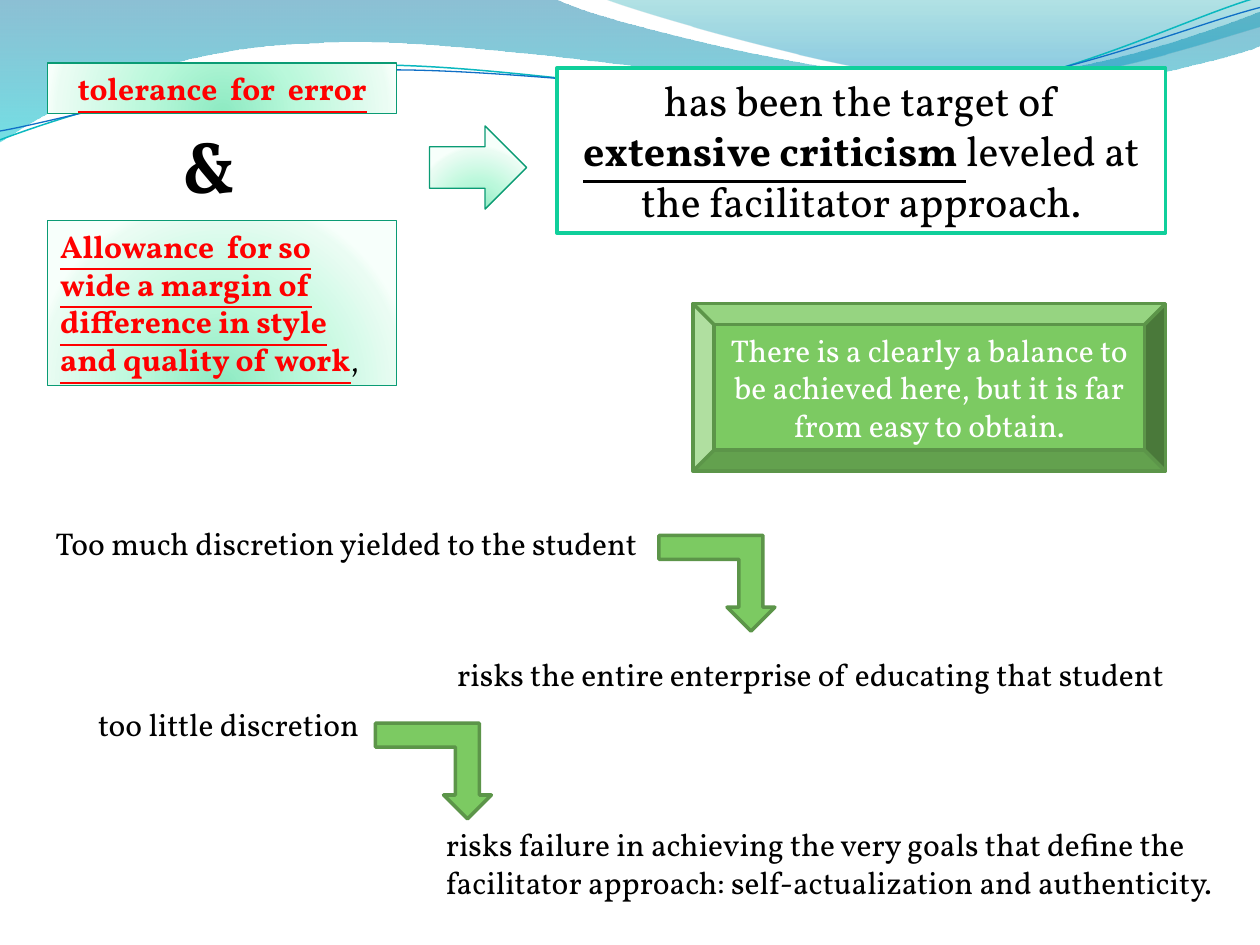
import math
from dataclasses import dataclass
from typing import Optional

from lxml import etree
from pptx import Presentation
from pptx.dml.color import RGBColor
from pptx.enum import shapes, text
from pptx.oxml import ns
from pptx.util import Inches, Pt

FONT = "Vollkorn"
MINT_STOPS = [(0, "8DEAC2", 100), (43, "BAF8DB", 100), (93, "EAFCF3", 100), (100, "F7FFFB", 100)]
MINT_PATH = ('<a:path path="circle"><a:fillToRect l="50000" t="130000" '
             'r="50000" b="-30000"/></a:path>')
DOWNWARD = '<a:lin ang="5400000" scaled="0"/>'
RECT = shapes.MSO_SHAPE.RECTANGLE
BENT = shapes.MSO_SHAPE.BENT_UP_ARROW
TILT = 357.3


@dataclass
class Run:
    words: str
    size: float = 18
    color: str = "000000"
    strong: bool = False
    underline: bool = False


@dataclass
class Box:
    at: tuple
    runs: tuple = ()
    shape: Optional[int] = None  # None means a plain text box
    fill: str = "mint"
    line: str = "0A9B74"
    width: float = 0.75
    centered: bool = False
    middle: bool = False
    wrap: bool = True
    flipped: bool = False


@dataclass
class Wave:
    start: tuple
    pieces: tuple  # two numbers: straight to a point; six: Bezier curve
    stops: tuple = ()
    line: str = ""
    width: float = 0
    pivot: Optional[tuple] = None  # centre of a tilted wave


def rgb(value: str) -> RGBColor:
    return RGBColor.from_string(value)


def gradient(s, stops, direction: str) -> None:
    """Give a shape a gradient of (position, colour, opacity) stops."""
    gs = "".join(f'<a:gs pos="{pos * 1000}"><a:srgbClr val="{c}"><a:alpha val="{a * 1000}"/>'
                 f'</a:srgbClr></a:gs>' for pos, c, a in stops)
    s.fill.solid()
    s.fill.fore_color.rgb = rgb("FFFFFF")
    spPr = s._element.spPr
    spPr.replace(spPr.find(ns.qn("a:solidFill")), etree.fromstring(
        f'<a:gradFill {ns.nsdecls("a")} rotWithShape="1"><a:gsLst>{gs}</a:gsLst>'
        f'{direction}</a:gradFill>'))


def outline(s, color: str, width: float) -> None:
    s.line.color.rgb = rgb(color)
    s.line.width = Pt(width)


def level(point: tuple, pivot: Optional[tuple]) -> tuple:
    """Undo the tilt of a point, since the shape itself is rotated."""
    if pivot is None:
        return point
    angle = math.radians(360 - TILT)
    dx, dy = point[0] - pivot[0], point[1] - pivot[1]
    return (pivot[0] + dx * math.cos(angle) - dy * math.sin(angle),
            pivot[1] + dx * math.sin(angle) + dy * math.cos(angle))


def bend(s, pieces: tuple) -> None:
    """Join each three segments of a curved piece into one Bezier curve."""
    segments = iter(list(s._element.iter(ns.qn("a:lnTo"))))
    for piece in pieces:
        first = next(segments)
        if len(piece) == 6:
            first.tag = ns.qn("a:cubicBezTo")
            for _ in range(2):
                extra = next(segments)
                first.append(extra[0])
                extra.getparent().remove(extra)


def draw_wave(sp, wave: Wave) -> None:
    points = [wave.start] + [piece[i:i + 2] for piece in wave.pieces
                             for i in range(0, len(piece), 2)]
    points = [tuple(Inches(v) for v in level(point, wave.pivot)) for point in points]
    builder = sp.build_freeform(*points[0])
    builder.add_line_segments(points[1:], close=bool(wave.stops))
    s = builder.convert_to_shape()
    bend(s, wave.pieces)
    s.shadow.inherit = False
    if wave.stops:
        gradient(s, wave.stops, DOWNWARD)
        s.line.fill.background()
    else:
        s.fill.background()
        outline(s, wave.line, wave.width)
    if wave.pivot:
        s.rotation = TILT


def write(tf, box: Box) -> None:
    tf.word_wrap = box.wrap
    tf.vertical_anchor = text.MSO_ANCHOR.MIDDLE if box.middle else text.MSO_ANCHOR.TOP
    if not box.middle:
        tf.auto_size = text.MSO_AUTO_SIZE.SHAPE_TO_FIT_TEXT
    p = tf.paragraphs[0]
    p.alignment = text.PP_ALIGN.CENTER if box.centered else text.PP_ALIGN.LEFT
    for run in box.runs:
        r = p.add_run()
        r.text = run.words
        r.font.name, r.font.size = FONT, Pt(run.size)
        r.font.bold, r.font.underline = run.strong, run.underline
        r.font.color.rgb = rgb(run.color)


def draw_box(sp, box: Box) -> None:
    at = [Inches(v) for v in box.at]
    if box.shape is None:
        s = sp.add_textbox(*at)
    else:
        s = sp.add_shape(box.shape, *at)
        s.shadow.inherit = False
        if box.fill == "mint":
            gradient(s, MINT_STOPS, MINT_PATH)
        else:
            s.fill.solid()
            s.fill.fore_color.rgb = rgb(box.fill)
        outline(s, box.line, box.width)
        if box.flipped:
            s._element.spPr.xfrm.set("flipV", "1")
    if box.runs:
        write(s.text_frame, box)


def red(words: str) -> Run:
    return Run(words, color="FF0000", strong=True, underline=True)


def bent_arrow(left: float, top: float) -> Box:
    return Box((left, top, 0.92, 0.76), shape=BENT, fill="7CCA62", line="5C9549", width=2,
               flipped=True)


WAVES = [
    Wave((0, 0), ((4.4, -0.01), (4.76, 0.17, 6.64, 0.63, 7.58, 0.63),
                  (8.53, 0.63, 9.58, 0.26, 10, 0.09), (10.01, 0.36),
                  (9.83, 0.44, 8.7, 0.76, 7.46, 0.75), (6.22, 0.75, 3.82, 0.28, 2.57, 0.34),
                  (1.29, 0.36, 0.46, 0.83, -0.01, 1.13)),
         stops=((0, "0074A1", 45), (100, "00C6CF", 55))),
    Wave((4.79, -0.01), ((5.09, 0.11, 6.82, 0.62, 7.69, 0.65),
                         (8.56, 0.69, 9.61, 0.32, 10, 0.21), (10, 0)),
         stops=((0, "00A1A9", 30), (80, "008BBF", 45))),
    Wave((0, 1.11), ((0.48, 0.93, 1.58, 0.57, 2.77, 0.52), (3.95, 0.47, 5.93, 0.89, 7.13, 0.8),
                     (8.33, 0.71, 9.38, 0.15, 9.98, -0.02)),
         line="0AB8BF", width=0.85, pivot=(4.99, 0.58)),
    Wave((0, 1.04), ((0.47, 0.96, 1.64, 0.61, 2.83, 0.56), (4.03, 0.51, 5.97, 0.84, 7.17, 0.75),
                     (8.36, 0.67, 9.41, 0.21, 10, 0.06)),
         line="0F6FC6", width=0.75, pivot=(5, 0.59)),
]

BOXES = [
    # Criticism of the approach
    Box((4.42, 0.54, 4.83, 1.31),
        (Run("has been the target of ", 24),
         Run("extensive criticism ", 24, strong=True, underline=True),
         Run("leveled at the facilitator approach.", 24)),
        RECT, "FFFFFF", "10CF9B", 2, centered=True),
    Box((0.38, 0.5, 2.77, 0.4), (red("tolerance  for  error"),), RECT, centered=True),
    Box((0.38, 1.75, 2.77, 1.31),
        (red("Allowance  for so wide a margin of difference in style and quality of work"),
         Run(",")), RECT),
    Box((3.41, 1, 0.77, 0.66), shape=shapes.MSO_SHAPE.RIGHT_ARROW),
    Box((1.35, 0.93, 0.92, 0.77), (Run("&", 40, strong=True),)),
    # Too much and too little discretion
    Box((0.34, 4.11, 4.92, 0.4), (Run("Too much discretion yielded to the student"),), wrap=False),
    Box((3.53, 5.15, 6.08, 0.4), (Run("risks the entire enterprise of educating that student"),)),
    bent_arrow(5.23, 4.25),
    Box((0.68, 5.55, 2.27, 0.4), (Run("too little discretion"),), wrap=False),
    bent_arrow(2.98, 5.74),
    Box((3.44, 6.5, 6.33, 0.71),
        (Run("risks failure in achieving the very goals that define the facilitator approach: "
             "self-actualization and authenticity."),)),
    # Balance
    Box((5.5, 2.41, 3.75, 1.33),
        (Run("There is a clearly a balance to be achieved here, but it is far from easy to "
             "obtain.", color="FFFFFF"),),
        shapes.MSO_SHAPE.BEVEL, "7CCA62", "5C9549", 2, centered=True, middle=True),
]

prs = Presentation()
prs.slide_width, prs.slide_height = Inches(10), Inches(7.5)
sp = prs.slides.add_slide(prs.slide_layouts[6]).shapes
for wave in WAVES:
    draw_wave(sp, wave)
for box in BOXES:
    draw_box(sp, box)
prs.save("out.pptx")
